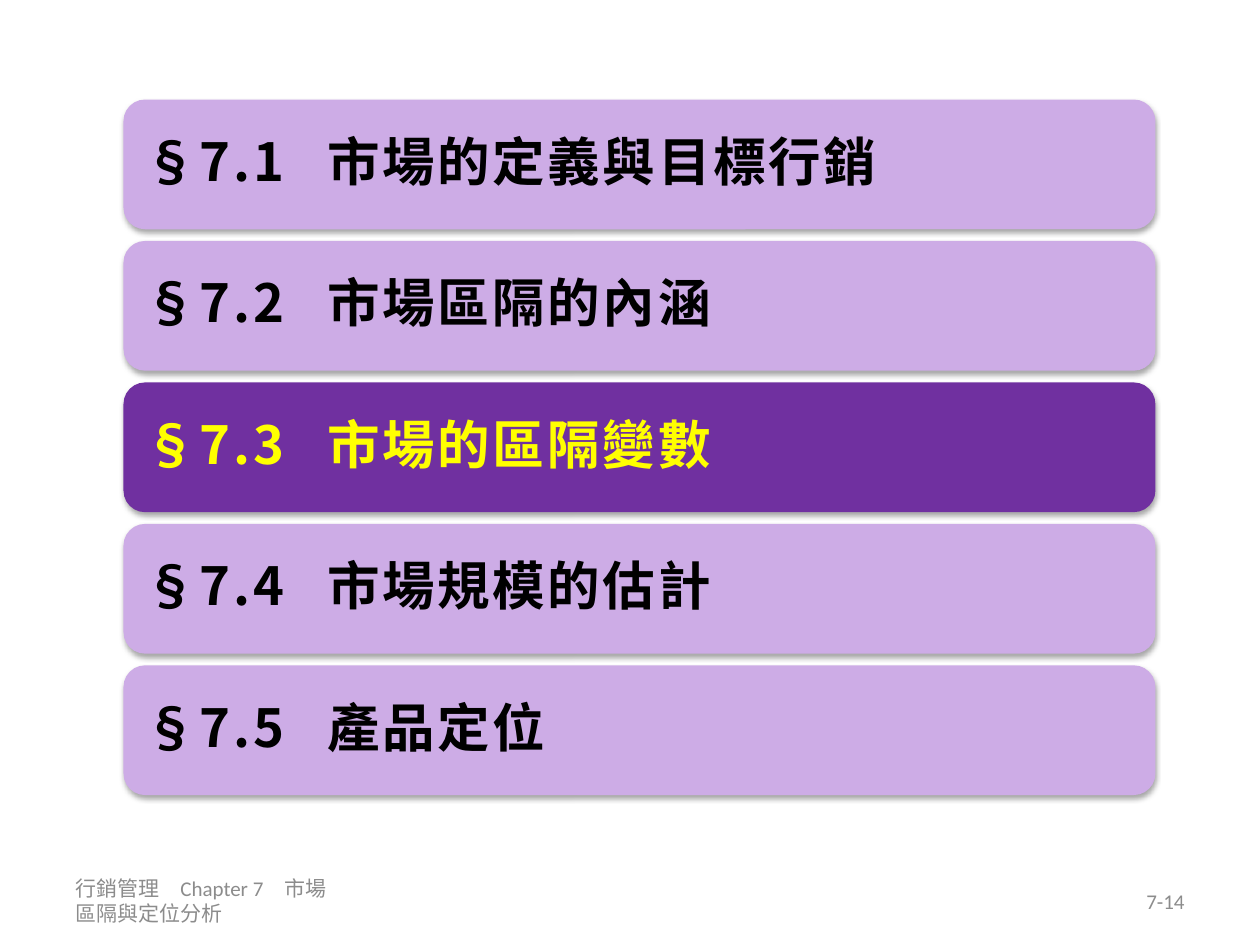
from lxml.etree import SubElement
from pptx import Presentation
from pptx.dml.color import RGBColor
from pptx.enum.shapes import MSO_SHAPE
from pptx.enum.text import MSO_ANCHOR, PP_ALIGN
from pptx.oxml.ns import qn
from pptx.util import Inches, Pt

COLORS = {"bar": "CDACE6", "current": "7030A0", "text": "000000",
          "highlight": "FFFF00", "footer": "8C8C8C", "shadow": "000000"}
SECTIONS = [("§7.1", "市場的定義與目標行銷"), ("§7.2", "市場區隔的內涵"),
            ("§7.3", "市場的區隔變數"), ("§7.4", "市場規模的估計"),
            ("§7.5", "產品定位")]
CURRENT_SECTION = "§7.3"
LEFT, TOP, WIDTH, HEIGHT = 0.98, 0.79, 8.19, 1.03
ROW_STEP = HEIGHT * 1.09
TITLE_TAB = 1.45


def color(name):
    return RGBColor.from_string(COLORS[name])


def set_values(target, values):
    for name, value in values.items():
        setattr(target, name, value)


class AgendaSlide:
    heading = {"name": "Noto Sans CJK SC", "size": Pt(30), "bold": True}
    footer = {"name": "Calibri", "size": Pt(12)}
    heading_paragraph = {"line_spacing": 0.9, "space_after": Pt(10.5)}
    footer_frame = {"word_wrap": True, "vertical_anchor": MSO_ANCHOR.MIDDLE}
    bar_frame = {**footer_frame,
                 **{f"margin_{side}": Inches(0.12)
                    for side in ("left", "top", "right", "bottom")}}

    def __init__(self, presentation):
        self.slide = presentation.slides.add_slide(presentation.slide_layouts[6])

    def add_text(self, paragraph, text, style, color_name, align=PP_ALIGN.LEFT):
        paragraph.alignment = align
        run = paragraph.add_run()
        run.text = text
        set_values(run.font, style)
        run.font.color.rgb = color(color_name)

    def add_shadow(self, shape):
        effects = SubElement(shape._element.spPr, qn("a:effectLst"))
        shadow = SubElement(effects, qn("a:outerShdw"), blurRad=str(Pt(3.1)),
                            dist=str(Pt(1.8)), dir="5400000", rotWithShape="0")
        shade = SubElement(shadow, qn("a:srgbClr"), val=COLORS["shadow"])
        SubElement(shade, qn("a:alpha"), val="35000")

    def add_bar(self, row, number, title):
        is_current = number == CURRENT_SECTION
        shape = self.slide.shapes.add_shape(
            MSO_SHAPE.ROUNDED_RECTANGLE, Inches(LEFT),
            Inches(TOP + row * ROW_STEP), Inches(WIDTH), Inches(HEIGHT))
        shape.fill.solid()
        shape.fill.fore_color.rgb = color("current" if is_current else "bar")
        shape.line.fill.background()
        self.add_shadow(shape)
        set_values(shape.text_frame, self.bar_frame)
        paragraph = shape.text_frame.paragraphs[0]
        set_values(paragraph, self.heading_paragraph)
        tabs = SubElement(paragraph._p.get_or_add_pPr(), qn("a:tabLst"))
        SubElement(tabs, qn("a:tab"), pos=str(Inches(TITLE_TAB)), algn="l")
        self.add_text(paragraph, f"{number}\t{title}", self.heading,
                      "highlight" if is_current else "text")
        for run in paragraph.runs:
            properties = run._r.get_or_add_rPr()
            properties.set("spc", "150")
            SubElement(properties, qn("a:ea"), typeface=self.heading["name"])

    def add_footer(self, left, text, align):
        box = self.slide.shapes.add_textbox(
            Inches(left), Inches(6.95), Inches(2.33), Inches(0.4))
        set_values(box.text_frame, self.footer_frame)
        self.add_text(box.text_frame.paragraphs[0], text, self.footer,
                      "footer", align)


def main():
    presentation = Presentation()
    set_values(presentation, {"slide_width": Inches(10),
                              "slide_height": Inches(7.5)})
    agenda = AgendaSlide(presentation)
    agenda.add_footer(0.5, "行銷管理　Chapter 7　市場區隔與定位分析", PP_ALIGN.LEFT)
    agenda.add_footer(7.17, "7-14", PP_ALIGN.RIGHT)
    for row, (number, title) in enumerate(SECTIONS):
        agenda.add_bar(row, number, title)
    presentation.save("out.pptx")


if __name__ == "__main__":
    main()
